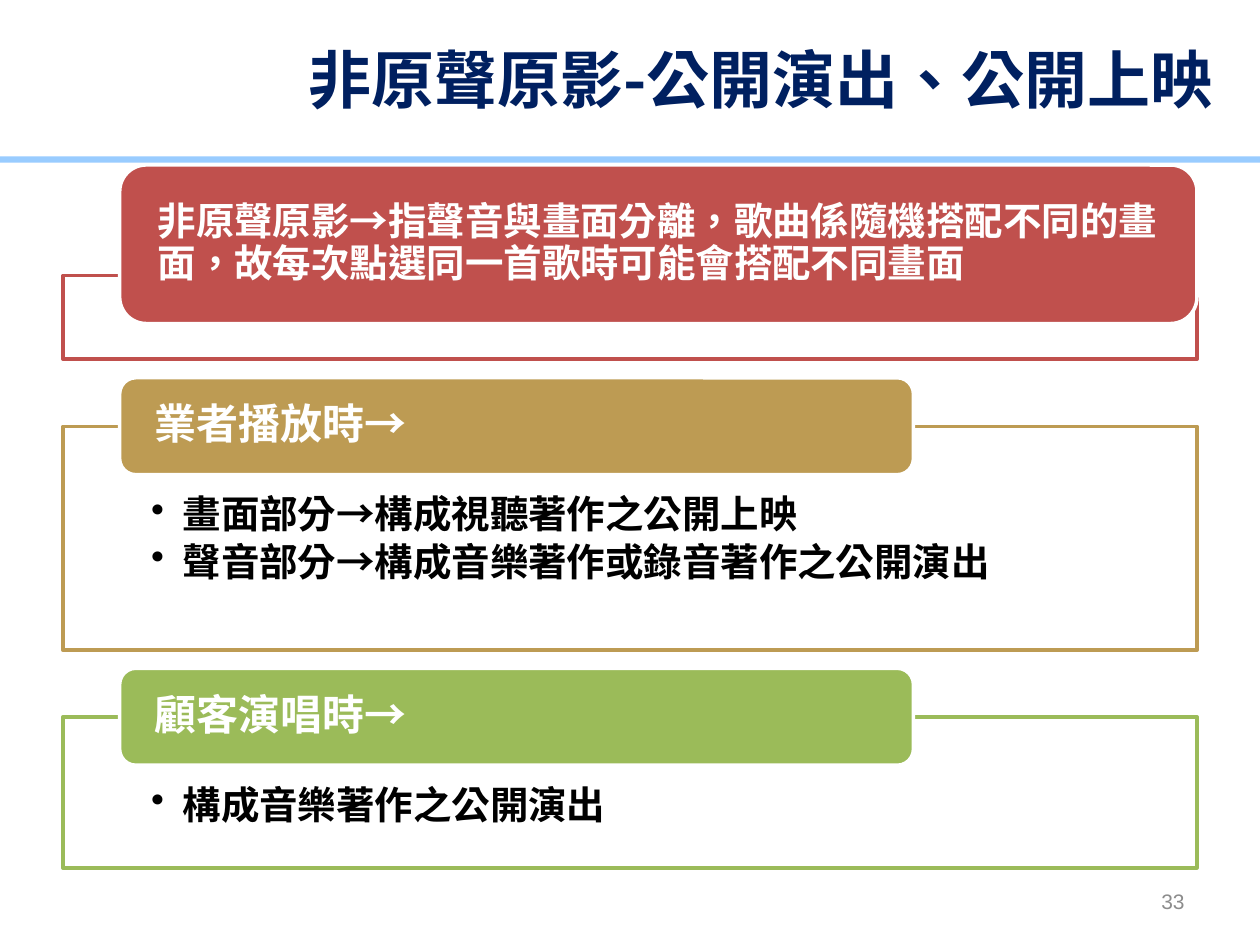
from lxml import etree
from pptx import Presentation
from pptx import util as u
from pptx.dml.color import RGBColor
from pptx.enum import shapes, text
from pptx.oxml.ns import qn

Pt = u.Pt
NAVY = RGBColor(0x00, 0x20, 0x60)
SKY = RGBColor(0x99, 0xCC, 0xFF)
RED = RGBColor(0xC0, 0x50, 0x4D)
GOLD = RGBColor(0xBD, 0x9B, 0x53)
GREEN = RGBColor(0x9B, 0xBB, 0x59)
WHITE = RGBColor(0xFF, 0xFF, 0xFF)
BLACK = RGBColor(0x00, 0x00, 0x00)
GRAY = RGBColor(0x8C, 0x8C, 0x8C)
CJK = "Noto Sans CJK SC"
LEFT, MID, RIGHT = text.PP_ALIGN.LEFT, text.PP_ALIGN.CENTER, text.PP_ALIGN.RIGHT
TOP, HALF = text.MSO_ANCHOR.TOP, text.MSO_ANCHOR.MIDDLE


def assign(item, values):
    for key, value in values.items():
        setattr(item, key, value)


def block(slide, kind, box, fill, line=None):
    shape = slide.shapes.add_shape(kind, *map(Pt, box))
    shape.shadow.inherit = False
    shape.fill.solid()
    shape.fill.fore_color.rgb = fill
    if line is None:
        shape.line.fill.background()
    else:
        shape.line.color.rgb = line
        shape.line.width = Pt(2)
    return shape


def write(shape, lines, size, color, pads=(7.2, 3.6, 7.2, 3.6), align=LEFT,
          anchor=HALF, face="Arial", bold=True, ratio=0.9, after=0, dots=False):
    frame = shape.text_frame
    sides = ("margin_left", "margin_top", "margin_right", "margin_bottom")
    assign(frame, dict(zip(sides, map(Pt, pads))))
    assign(frame, {"word_wrap": True, "vertical_anchor": anchor})
    for i, line in enumerate(lines):
        para = frame.paragraphs[0] if i == 0 else frame.add_paragraph()
        assign(para, {"alignment": align, "line_spacing": ratio,
                      "space_after": Pt(after)})
        if dots:
            para.level = 1
            props = para._p.get_or_add_pPr()
            props.set("marL", str(Pt(18)))
            props.set("indent", str(Pt(-18)))
            etree.SubElement(props, qn("a:buChar")).set("char", "•")
        run = para.add_run()
        run.text = line
        assign(run.font, {"size": Pt(size), "bold": bold, "name": face})
        run.font.color.rgb = color
        props = run._r.get_or_add_rPr()
        props.set("lang", "zh-TW")
        etree.SubElement(props, qn("a:ea")).set("typeface", CJK)


def header(slide, box, title):
    x, y, w, h = box
    block(slide, shapes.MSO_SHAPE.RECTANGLE, (x - 3, h - 0.7, w + 4.5, 3.6), SKY)
    area = slide.shapes.add_textbox(*map(Pt, (x + 111, y, 648, h)))
    write(area, [title], 36, NAVY, align=MID, face=CJK, ratio=1)


def card(slide, box, tab, color, head, size, items=()):
    x, y, w, h = box
    rise, wide, high = tab
    body = block(slide, shapes.MSO_SHAPE.RECTANGLE, box, WHITE, color)
    if items:
        write(body, items, 22, BLACK, (50.4, 39.6, 50.4, 12.2),
              anchor=TOP, after=3.3, dots=True)
    label = block(slide, shapes.MSO_SHAPE.ROUNDED_RECTANGLE,
                  (x + 32.4, y - rise, wide, high), color, WHITE)
    write(label, [head], size, WHITE, (17.3, 0, 17.3, 0), after=0.35 * size)


def footer(slide, box, number):
    area = slide.shapes.add_textbox(*map(Pt, box))
    write(area, [number], 12, GRAY, align=RIGHT, bold=False, ratio=1)


def main():
    deck = Presentation()
    assign(deck, {"slide_width": Pt(720), "slide_height": Pt(540)})
    slide = deck.slides.add_slide(deck.slide_layouts[6])
    header(slide, (0, 0, 720, 90), "非原聲原影-公開演出、公開上映")
    card(slide, (36, 157.5, 648, 47.8), (63.2, 615.6, 90.6), RED,
         "非原聲原影→指聲音與畫面分離，歌曲係隨機搭配不同的畫面，故每次點選同一首歌時可能會搭配不同畫面", 22)
    small = (27.7, 453.6, 55.4)
    card(slide, (36, 243.6, 648, 128), small, GOLD, "業者播放時→", 24,
         ["畫面部分→構成視聽著作之公開上映", "聲音部分→構成音樂著作或錄音著作之公開演出"])
    card(slide, (36, 409.6, 648, 86.4), small, GREEN, "顧客演唱時→", 24,
         ["構成音樂著作之公開演出"])
    footer(slide, (516, 500.5, 168, 28.8), "33")
    deck.save("out.pptx")


if __name__ == "__main__":
    main()
